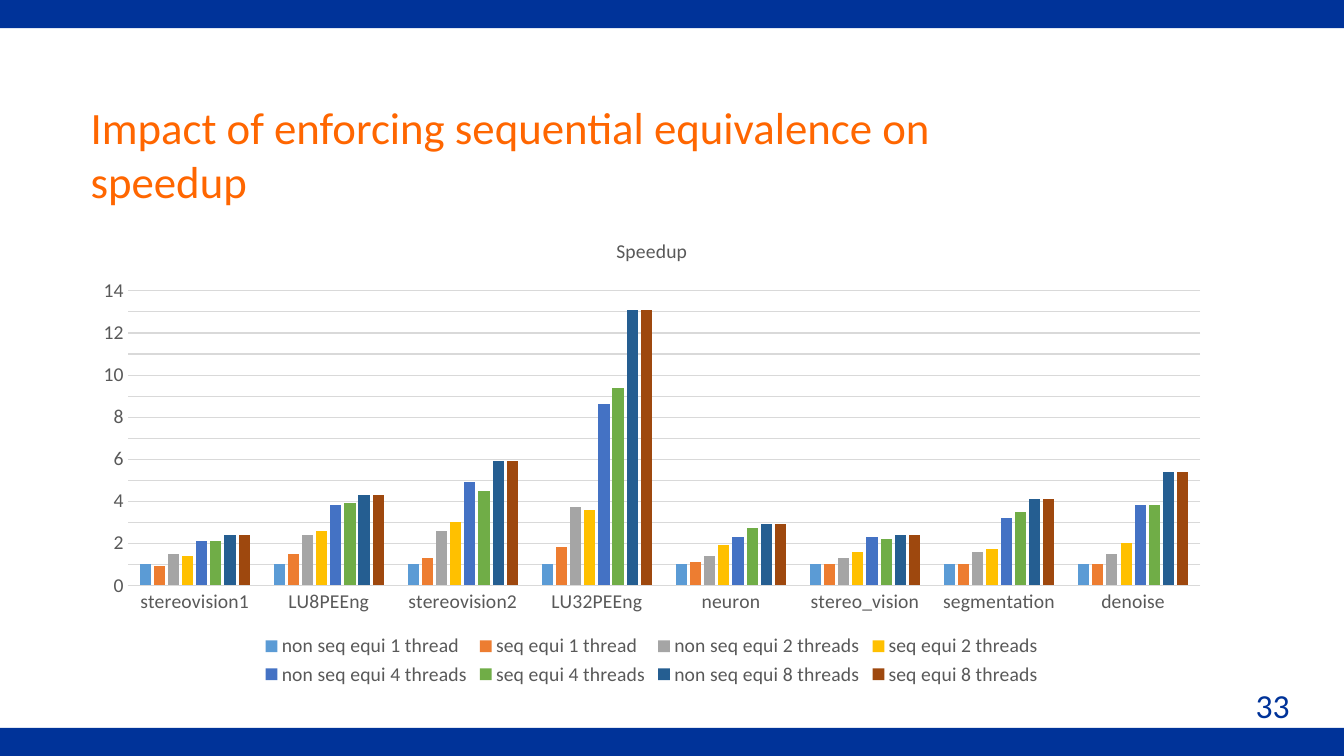
from dataclasses import dataclass

from pptx import Presentation
from pptx.chart.data import CategoryChartData
from pptx.dml.color import RGBColor
from pptx.enum.chart import XL_CHART_TYPE, XL_LEGEND_POSITION, XL_TICK_MARK
from pptx.enum.shapes import MSO_SHAPE
from pptx.enum.text import MSO_ANCHOR, PP_ALIGN
from pptx.util import Inches, Pt


@dataclass(frozen=True)
class Theme:
    font: str = "Calibri"
    navy: RGBColor = RGBColor(0x00, 0x33, 0x99)
    orange: RGBColor = RGBColor(0xFF, 0x66, 0x00)
    white: RGBColor = RGBColor(0xFF, 0xFF, 0xFF)
    gray: RGBColor = RGBColor(0x59, 0x59, 0x59)
    grid: RGBColor = RGBColor(0xD9, 0xD9, 0xD9)
    title_size: Pt = Pt(32)
    number_size: Pt = Pt(24)
    chart_size: Pt = Pt(14)
    grid_width: Pt = Pt(0.75)


theme = Theme()


def style_font(font, size, color):
    font.name, font.size, font.bold = theme.font, size, False
    font.color.rgb = color


def add_text(text, box, size, color, align, anchor):
    tf = s.shapes.add_textbox(*map(Inches, box)).text_frame
    tf.word_wrap = True
    tf.vertical_anchor = anchor
    p = tf.paragraphs[0]
    p.alignment = align
    r = p.add_run()
    r.text = text
    style_font(r.font, size, color)


prs = Presentation()
prs.slide_width, prs.slide_height = Inches(13.33), Inches(7.5)
s = prs.slides.add_slide(prs.slide_layouts[6])

# Top and bottom bands
for top in (0, 7.22):
    band = s.shapes.add_shape(MSO_SHAPE.RECTANGLE, 0, Inches(top), prs.slide_width, Inches(0.28))
    band.shadow.inherit = False
    band.fill.solid()
    band.fill.fore_color.rgb = theme.navy
    band.line.fill.background()

add_text("Impact of enforcing sequential equivalence on speedup", (0.8, 0.9, 9.51, 1.25),
         theme.title_size, theme.orange, PP_ALIGN.LEFT, MSO_ANCHOR.MIDDLE)
add_text("33", (10.11, 6.75, 2.78, 0.5),
         theme.number_size, theme.navy, PP_ALIGN.RIGHT, MSO_ANCHOR.TOP)

# Speedup per benchmark, by thread count and mode
benchmarks = ["stereovision1", "LU8PEEng", "stereovision2", "LU32PEEng",
              "neuron", "stereo_vision", "segmentation", "denoise"]
speedups = [
    ("non seq equi 1 thread", "5B9BD5", [1, 1, 1, 1, 1, 1, 1, 1]),
    ("seq equi 1 thread", "ED7D31", [0.9, 1.5, 1.3, 1.8, 1.1, 1, 1, 1]),
    ("non seq equi 2 threads", "A5A5A5", [1.5, 2.4, 2.6, 3.7, 1.4, 1.3, 1.6, 1.5]),
    ("seq equi 2 threads", "FFC000", [1.4, 2.6, 3, 3.6, 1.9, 1.6, 1.7, 2]),
    ("non seq equi 4 threads", "4472C4", [2.1, 3.8, 4.9, 8.6, 2.3, 2.3, 3.2, 3.8]),
    ("seq equi 4 threads", "70AD47", [2.1, 3.9, 4.5, 9.4, 2.7, 2.2, 3.5, 3.8]),
    ("non seq equi 8 threads", "255E91", [2.4, 4.3, 5.9, 13.1, 2.9, 2.4, 4.1, 5.4]),
    ("seq equi 8 threads", "9E480E", [2.4, 4.3, 5.9, 13.1, 2.9, 2.4, 4.1, 5.4]),
]
data = CategoryChartData(number_format="General")
data.categories = benchmarks
for name, _, values in speedups:
    data.add_series(name, values)

chart = s.shapes.add_chart(XL_CHART_TYPE.COLUMN_CLUSTERED, Inches(0.8), Inches(2.17),
                           Inches(11.33), Inches(4.68), data).chart
style_font(chart.font, theme.chart_size, theme.gray)

chart.has_title = True
chart.chart_title.include_in_layout = False
title = chart.chart_title.text_frame
title.text = "Speedup"
style_font(title.paragraphs[0].runs[0].font, theme.chart_size, theme.gray)

chart.has_legend = True
chart.legend.position = XL_LEGEND_POSITION.BOTTOM
chart.legend.include_in_layout = False
style_font(chart.legend.font, theme.chart_size, theme.gray)

plot = chart.plots[0]
plot.gap_width, plot.overlap, plot.vary_by_categories = 219, -27, False
for series, (_, color, _) in zip(plot.series, speedups):
    series.format.fill.solid()
    series.format.fill.fore_color.rgb = RGBColor.from_string(color)
    series.invert_if_negative = False

for axis in (chart.category_axis, chart.value_axis):
    axis.major_tick_mark = axis.minor_tick_mark = XL_TICK_MARK.NONE
    style_font(axis.tick_labels.font, theme.chart_size, theme.gray)

values_axis = chart.value_axis
for attr, value in {"minimum_scale": 0, "maximum_scale": 14, "major_unit": 1,
                    "has_major_gridlines": True}.items():
    setattr(values_axis, attr, value)
values_axis.format.line.fill.background()
for line in (chart.category_axis.format.line, values_axis.major_gridlines.format.line):
    line.color.rgb = theme.grid
    line.width = theme.grid_width

prs.save("out.pptx")
